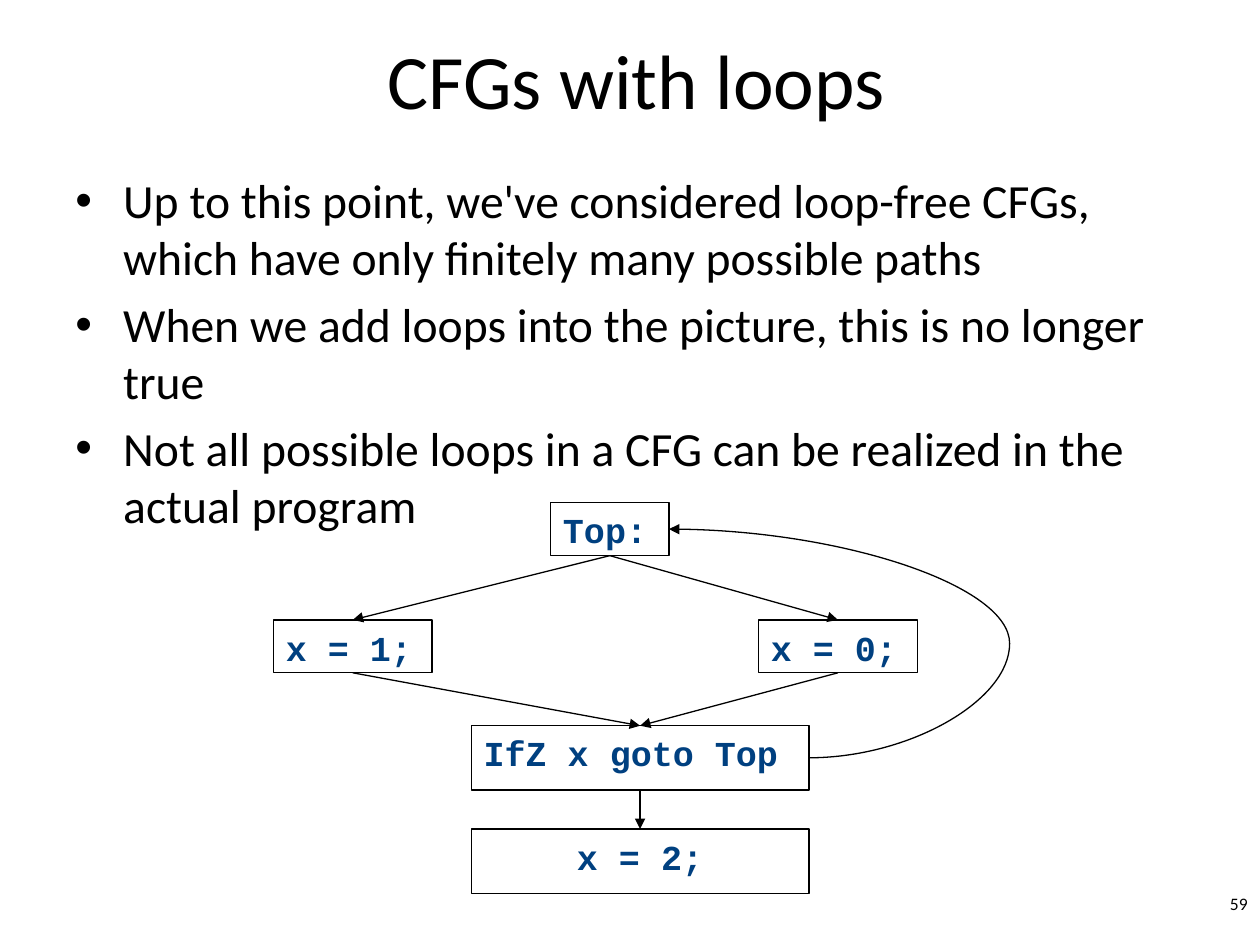
from dataclasses import dataclass

from lxml.etree import SubElement
from pptx import Presentation
from pptx.dml.color import RGBColor
from pptx.enum.shapes import MSO_CONNECTOR, MSO_SHAPE
from pptx.enum.text import MSO_ANCHOR, PP_ALIGN
from pptx.oxml.ns import qn
from pptx.util import Inches, Pt


@dataclass(frozen=True)
class Theme:
    black: RGBColor = RGBColor(0, 0, 0)
    code_blue: RGBColor = RGBColor(0x00, 0x40, 0x80)
    text_font: str = "Calibri"
    code_font: str = "Courier New"
    title_size: float = 44
    body_size: float = 27.2
    code_size: float = 20
    number_size: float = 10
    line_width: float = 0.75


theme = Theme()
TOP, LEFT, BOTTOM, RIGHT = range(4)


def add_run(paragraph, text, size, name=theme.text_font, color=theme.black, bold=False):
    run = paragraph.add_run()
    run.text = text
    run.font.size = Pt(size)
    run.font.name = name
    run.font.color.rgb = color
    run.font.bold = bold


def add_text_frame(left, top, width, height, anchor=MSO_ANCHOR.TOP):
    box = slide.shapes.add_textbox(Inches(left), Inches(top), Inches(width), Inches(height))
    box.text_frame.word_wrap = True
    box.text_frame.vertical_anchor = anchor
    return box.text_frame


presentation = Presentation()
presentation.slide_width = Inches(10)
presentation.slide_height = Inches(7.5)
slide = presentation.slides.add_slide(presentation.slide_layouts[6])

# Title
title = add_text_frame(0.8, 0, 8.5, 1.25, MSO_ANCHOR.MIDDLE).paragraphs[0]
title.alignment = PP_ALIGN.CENTER
add_run(title, "CFGs with loops", theme.title_size)

# Bulleted body
points = [
    "Up to this point, we've considered loop-free CFGs, which have only finitely many possible paths",
    "When we add loops into the picture, this is no longer true",
    "Not all possible loops in a CFG can be realized in the actual program",
]
body = add_text_frame(0.5, 1.31, 9, 2.83)
for index, point in enumerate(points):
    paragraph = body.add_paragraph() if index else body.paragraphs[0]
    paragraph.space_before = Pt(0.2 * theme.body_size)
    properties = paragraph._p.get_or_add_pPr()
    properties.set("marL", str(Inches(0.38)))
    properties.set("indent", str(Inches(-0.38)))
    SubElement(properties, qn("a:buFont"), typeface="Arial")
    SubElement(properties, qn("a:buChar"), char="•")
    add_run(paragraph, point, theme.body_size)

# Slide number
number = add_text_frame(7.92, 7.04, 2.08, 0.3).paragraphs[0]
number.alignment = PP_ALIGN.RIGHT
add_run(number, "59", theme.number_size)

# Basic blocks of the control-flow graph
blocks = {}
for name, text, left, top, width, height, alignment in [
    ("test", "IfZ x goto Top", 3.74, 5.76, 2.68, 0.51, PP_ALIGN.LEFT),
    ("one", "x = 1;", 2.17, 4.92, 1.26, 0.42, PP_ALIGN.LEFT),
    ("entry", "Top:", 4.37, 3.99, 0.94, 0.42, PP_ALIGN.LEFT),
    ("zero", "x = 0;", 6.02, 4.92, 1.26, 0.42, PP_ALIGN.LEFT),
    ("exit", "x = 2;", 3.74, 6.58, 2.68, 0.51, PP_ALIGN.CENTER),
]:
    block = slide.shapes.add_shape(
        MSO_SHAPE.RECTANGLE, Inches(left), Inches(top), Inches(width), Inches(height))
    block.shadow.inherit = False
    block.fill.background()
    block.line.color.rgb = theme.black
    block.line.width = Pt(theme.line_width)
    block.text_frame.word_wrap = False
    block.text_frame.vertical_anchor = MSO_ANCHOR.TOP
    paragraph = block.text_frame.paragraphs[0]
    paragraph.alignment = alignment
    add_run(paragraph, text, theme.code_size, theme.code_font, theme.code_blue, bold=True)
    blocks[name] = block

# Flow between the blocks; the back edge curves out to the right
for kind, source, source_side, target, target_side in [
    (MSO_CONNECTOR.STRAIGHT, "entry", BOTTOM, "one", TOP),
    (MSO_CONNECTOR.STRAIGHT, "entry", BOTTOM, "zero", TOP),
    (MSO_CONNECTOR.STRAIGHT, "one", BOTTOM, "test", TOP),
    (MSO_CONNECTOR.STRAIGHT, "zero", BOTTOM, "test", TOP),
    (MSO_CONNECTOR.CURVE, "test", RIGHT, "entry", RIGHT),
    (MSO_CONNECTOR.STRAIGHT, "test", BOTTOM, "exit", TOP),
]:
    edge = slide.shapes.add_connector(kind, 0, 0, 0, 0)
    edge.begin_connect(blocks[source], source_side)
    edge.end_connect(blocks[target], target_side)
    edge.line.color.rgb = theme.black
    edge.line.width = Pt(theme.line_width)
    SubElement(edge.line._get_or_add_ln(), qn("a:tailEnd"), type="triangle", w="med", len="med")
    shape_properties = edge._element.spPr
    SubElement(shape_properties, qn("a:effectLst"))
    if kind == MSO_CONNECTOR.CURVE:
        adjustments = shape_properties.find(qn("a:prstGeom")).get_or_add_avLst()
        SubElement(adjustments, qn("a:gd"), name="adj1", fmla="val -143600")

presentation.save("out.pptx")
